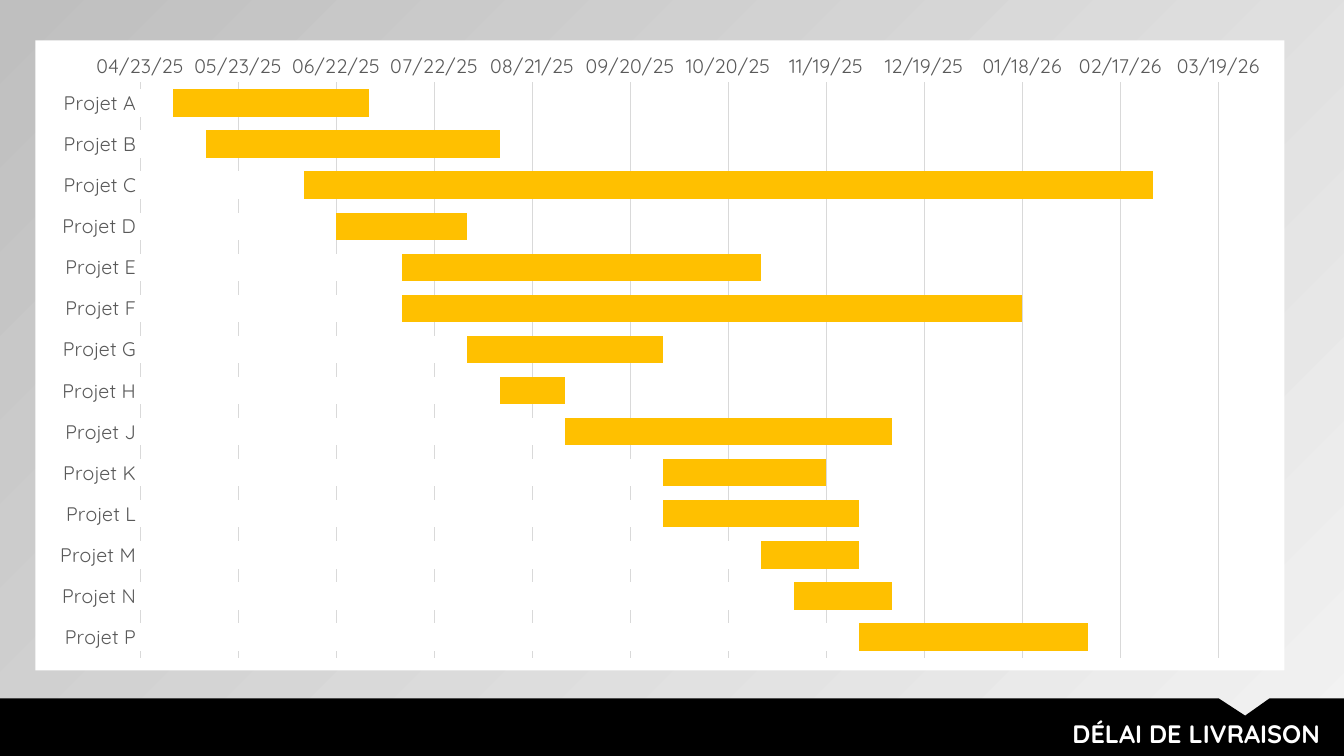
from lxml import etree
from pptx import Presentation
from pptx.chart.data import CategoryChartData
from pptx.dml.color import RGBColor
from pptx.enum.chart import XL_CHART_TYPE, XL_TICK_MARK
from pptx.enum.text import PP_ALIGN
from pptx.oxml import parse_xml
from pptx.oxml.ns import nsdecls, qn
from pptx.util import Inches, Pt

BAR = XL_CHART_TYPE.BAR_CLUSTERED
NO_TICK = XL_TICK_MARK.NONE
RIGHT = PP_ALIGN.RIGHT
FONT = "Quicksand"
COLORS = {"light": "F2F2F2", "dark": "BFBFBF", "black": "000000", "white": "FFFFFF",
          "bar": "FFC000", "label": "595959", "grid": "D9D9D9"}
PROJECTS = [
    ("A", 45780, 45840), ("B", 45790, 45880), ("C", 45820, 46080), ("D", 45830, 45870),
    ("E", 45850, 45960), ("F", 45850, 46040), ("G", 45870, 45930), ("H", 45880, 45900),
    ("J", 45900, 46000), ("K", 45930, 45980), ("L", 45930, 45990), ("M", 45960, 45990),
    ("N", 45970, 46000), ("P", 45990, 46060),
]
BANNER = [(0, 6.93), (12.09, 6.93), (12.35, 7.1), (12.59, 6.93),
          (13.33, 6.93), (13.33, 7.5), (0, 7.5)]
PLOT_AREA = {"x": 0.084, "y": 0.067, "w": 0.863, "h": 0.913}


def rgb(name):
    """Return the named palette colour."""
    return RGBColor.from_string(COLORS[name])


def set_font(font, size, color, bold=False):
    """Apply the slide typeface with a size, colour and weight."""
    font.name, font.size, font.bold = FONT, Pt(size), bold
    font.color.rgb = rgb(color)


def set_line(line, color):
    """Give a line a thin solid stroke."""
    line.color.rgb = rgb(color)
    line.width = Pt(0.75)


def set_background(s):
    """Fill the background with a diagonal grey gradient."""
    fill = s.background.fill
    fill.gradient()
    fill.gradient_angle = 135
    for stop, color, position in zip(fill.gradient_stops, ("light", "dark"), (0, 1)):
        stop.color.rgb = rgb(color)
        stop.position = position


def add_banner(s):
    """Draw the notched black band along the bottom."""
    points = [(Inches(x), Inches(y)) for x, y in BANNER]
    builder = s.shapes.build_freeform(*points[0])
    builder.add_line_segments(points[1:], close=True)
    sp = builder.convert_to_shape()
    sp.shadow.inherit = False
    sp.fill.solid()
    sp.fill.fore_color.rgb = rgb("black")
    sp.line.fill.background()


def add_title(s, text):
    """Write the right-aligned title on the band."""
    tf = s.shapes.add_textbox(Inches(4.13), Inches(7.08), Inches(9.06), Inches(0.4)).text_frame
    tf.word_wrap = True
    p = tf.paragraphs[0]
    p.text, p.alignment = text, RIGHT
    set_font(p.font, 18, "white", bold=True)


def style_axis(axis):
    """Remove tick marks and set the axis labels."""
    axis.major_tick_mark = axis.minor_tick_mark = NO_TICK
    set_font(axis.tick_labels.font, 14, "label")


def frame_chart(chart):
    """Fix the inner plot area and fill the chart background."""
    plot_area = chart._chartSpace.chart.plotArea
    for old in plot_area.findall(qn("c:layout")):
        plot_area.remove(old)
    layout = parse_xml(f'<c:layout {nsdecls("c")}><c:manualLayout/></c:layout>')
    settings = {"layoutTarget": "inner", "xMode": "edge", "yMode": "edge", **PLOT_AREA}
    for tag, value in settings.items():
        etree.SubElement(layout[0], qn(f"c:{tag}")).set("val", str(value))
    plot_area.insert(0, layout)
    chart._chartSpace.chart.addnext(parse_xml(
        f'<c:spPr {nsdecls("c", "a")}><a:solidFill><a:srgbClr val="{COLORS["white"]}"/>'
        '</a:solidFill><a:ln><a:noFill/></a:ln></c:spPr>'))


def add_gantt(s):
    """Add the schedule, with white start bars masking the end bars."""
    names, starts, ends = zip(*PROJECTS)
    data = CategoryChartData()
    data.categories = [f"Projet {name}" for name in names]
    data.add_series("Series 1", ends)
    data.add_series("Series 2", starts)
    chart = s.shapes.add_chart(BAR, Inches(0.35), Inches(0.4), Inches(12.39), Inches(6.25),
                               data).chart
    chart.has_legend = chart.has_title = False
    set_font(chart.font, 14, "black")
    frame_chart(chart)

    plot = chart.plots[0]
    plot.gap_width, plot.overlap, plot.vary_by_categories = 50, 100, False
    for series, color in zip(plot.series, ("bar", "white")):
        series.format.fill.solid()
        series.format.fill.fore_color.rgb = rgb(color)

    projects, dates = chart.category_axis, chart.value_axis
    style_axis(projects)
    projects.reverse_order = True
    set_line(projects.format.line, "grid")
    style_axis(dates)
    dates.minimum_scale, dates.maximum_scale, dates.major_unit = 45770, 46100, 30
    dates.tick_labels.number_format = "mm/dd/yy;@"
    dates.tick_labels.number_format_is_linked = False
    dates.format.line.fill.background()
    set_line(dates.major_gridlines.format.line, "grid")


def main():
    """Build and save the delivery schedule slide."""
    prs = Presentation()
    prs.slide_width, prs.slide_height = Inches(13.33), Inches(7.5)
    s = prs.slides.add_slide(prs.slide_layouts[6])
    set_background(s)
    add_banner(s)
    add_title(s, "DÉLAI DE LIVRAISON")
    add_gantt(s)
    prs.save("out.pptx")


if __name__ == "__main__":
    main()
